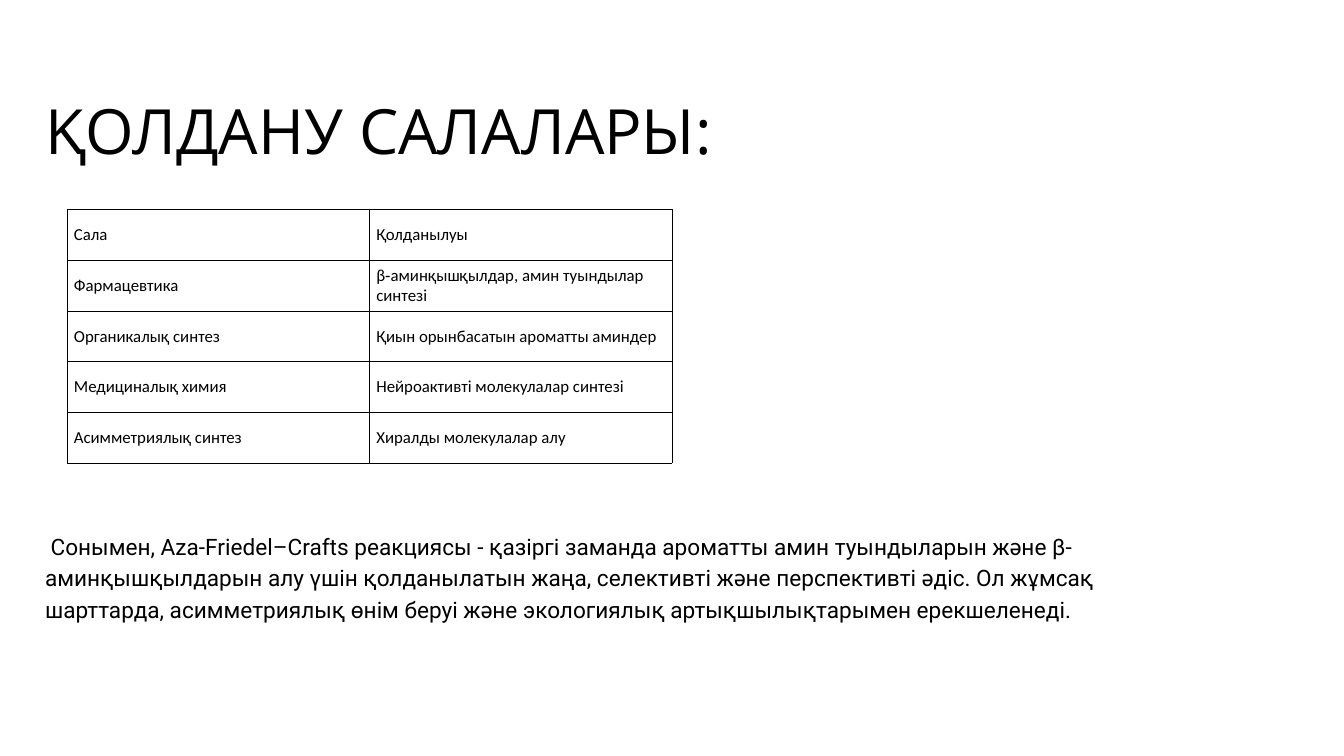
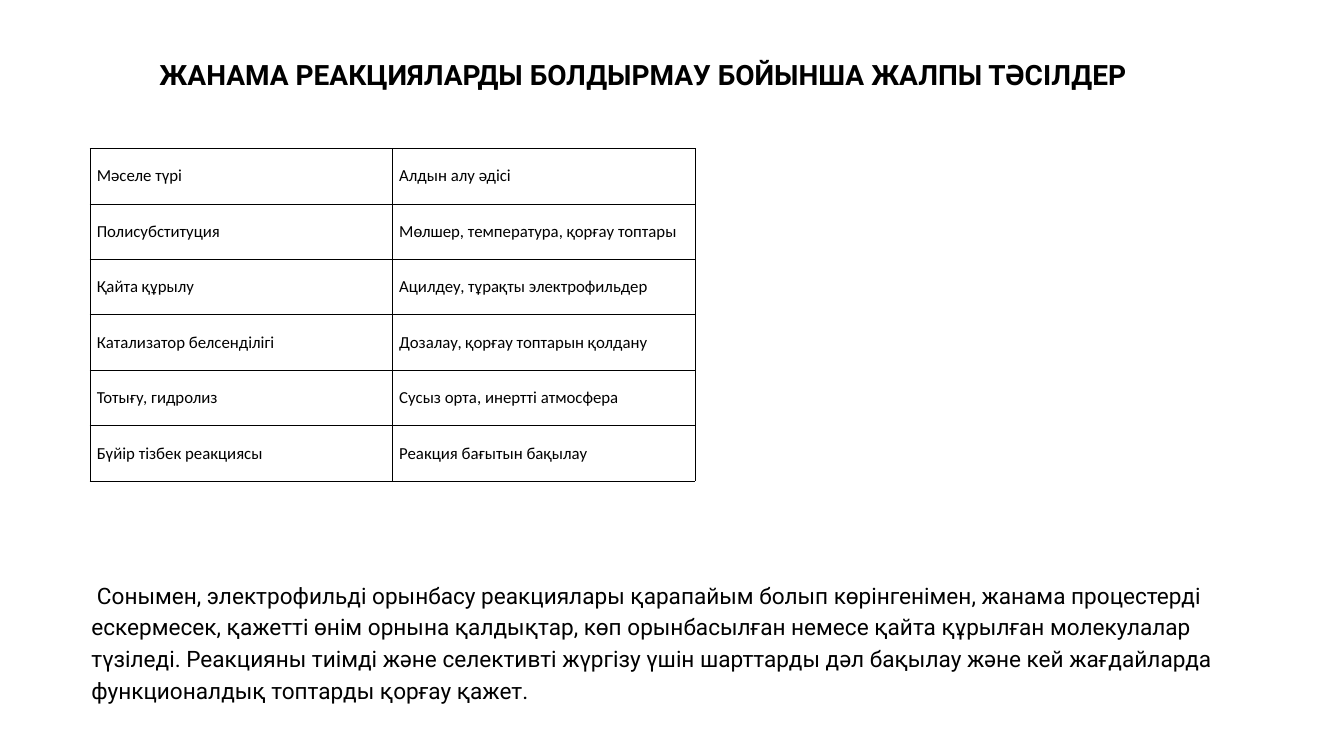
"""Build two slides, each with a title, a two-column table and a conclusion."""
from lxml import etree
from pptx import Presentation
from pptx.dml.color import RGBColor
from pptx.enum.text import MSO_ANCHOR
from pptx.oxml.ns import qn
from pptx.util import Inches, Pt

MIDDLE = MSO_ANCHOR.MIDDLE
BLACK = RGBColor(0x00, 0x00, 0x00)
WHITE = RGBColor(0xFF, 0xFF, 0xFF)
BORDER_WIDTH = Pt(0.8)
COLUMN_WIDTH = 4.5

CELL_FONT = {"name": "Calibri", "size": Pt(18)}
BODY_FONT = {"name": "Roboto", "size": Pt(24.2)}
BODY_SPACING = 33.9

PAGES = [
    {
        "title": "ҚОЛДАНУ САЛАЛАРЫ:",
        "title_box": (0.67, 1.38, 14.19, 1.1),
        "title_font": {"name": "Open Sans", "size": Pt(66.8)},
        "title_spacing": 80.1,
        "table_corner": (1, 3.12),
        "row_height": 0.754,
        "rows": [
            ("Сала", "Қолданылуы"),
            ("Фармацевтика", "β‑аминқышқылдар, амин туындылар синтезі"),
            ("Органикалық синтез", "Қиын орынбасатын ароматты аминдер"),
            ("Медициналық химия", "Нейроактивті молекулалар синтезі"),
            ("Асимметриялық синтез", "Хиралды молекулалар алу"),
        ],
        "conclusion": " Сонымен, Aza-Friedel–Crafts реакциясы - қазіргі заманда ароматты амин "
                      "туындыларын және β-аминқышқылдарын алу үшін қолданылатын жаңа, селективті "
                      "және перспективті әдіс. Ол жұмсақ шарттарда, асимметриялық өнім беруі және "
                      "экологиялық артықшылықтарымен ерекшеленеді.",
        "conclusion_box": (0.67, 7.86, 16.99, 1.87),
    },
    {
        "title": " ЖАНАМА РЕАКЦИЯЛАРДЫ БОЛДЫРМАУ БОЙЫНША ЖАЛПЫ ТӘСІЛДЕР",
        "title_box": (2.27, 0.78, 15.46, 1.17),
        "title_font": {"name": "Roboto", "size": Pt(30), "bold": True},
        "title_spacing": 42,
        "table_corner": (1.34, 2.21),
        "row_height": 0.825,
        "rows": [
            ("Мәселе түрі", "Алдын алу әдісі"),
            ("Полисубституция", "Мөлшер, температура, қорғау топтары"),
            ("Қайта құрылу", "Ацилдеу, тұрақты электрофильдер"),
            ("Катализатор белсенділігі", "Дозалау, қорғау топтарын қолдану"),
            ("Тотығу, гидролиз", "Сусыз орта, инертті атмосфера"),
            ("Бүйір тізбек реакциясы", "Реакция бағытын бақылау"),
        ],
        "conclusion": " Сонымен, электрофильді орынбасу реакциялары қарапайым болып көрінгенімен, "
                      "жанама процестерді ескермесек, қажетті өнім орнына қалдықтар, көп "
                      "орынбасылған немесе қайта құрылған молекулалар түзіледі. Реакцияны тиімді "
                      "және селективті жүргізу үшін шарттарды дәл бақылау және кей жағдайларда "
                      "функционалдық топтарды қорғау қажет.",
        "conclusion_box": (1.36, 8.59, 17.23, 2.34),
    },
]


def write(para, text, font):
    span = para.add_run()
    span.text = text
    span.font.color.rgb = BLACK
    for name, value in font.items():
        setattr(span.font, name, value)


def add_text(page, place, text, font, spacing):
    frame = page.shapes.add_textbox(*map(Inches, place)).text_frame
    frame.word_wrap = True
    for side in ("left", "top", "right", "bottom"):
        setattr(frame, f"margin_{side}", 0)
    para = frame.paragraphs[0]
    para.line_spacing = Pt(spacing)
    write(para, text, font)


deck = Presentation()
deck.slide_width, deck.slide_height = Inches(20), Inches(11.25)

for content in PAGES:
    page = deck.slides.add_slide(deck.slide_layouts[6])
    page.background.fill.solid()
    page.background.fill.fore_color.rgb = WHITE

    add_text(page, content["title_box"], content["title"],
             content["title_font"], content["title_spacing"])
    add_text(page, content["conclusion_box"], content["conclusion"], BODY_FONT, BODY_SPACING)

    rows = content["rows"]
    left, top = content["table_corner"]
    size = (2 * COLUMN_WIDTH, len(rows) * content["row_height"])
    table = page.shapes.add_table(len(rows), 2, *map(Inches, (left, top, *size))).table
    table.first_row = table.horz_banding = False

    for row, texts in enumerate(rows):
        for column, text in enumerate(texts):
            cell = table.cell(row, column)
            cell.vertical_anchor = MIDDLE
            write(cell.text_frame.paragraphs[0], text, CELL_FONT)
            properties = cell._tc.get_or_add_tcPr()
            for edge in ("a:lnL", "a:lnR", "a:lnT", "a:lnB"):
                line = etree.SubElement(properties, qn(edge), w=str(int(BORDER_WIDTH)))
                paint = etree.SubElement(line, qn("a:solidFill"))
                etree.SubElement(paint, qn("a:srgbClr"), val=str(BLACK))
            cell.fill.solid()
            cell.fill.fore_color.rgb = WHITE

deck.save("out.pptx")
